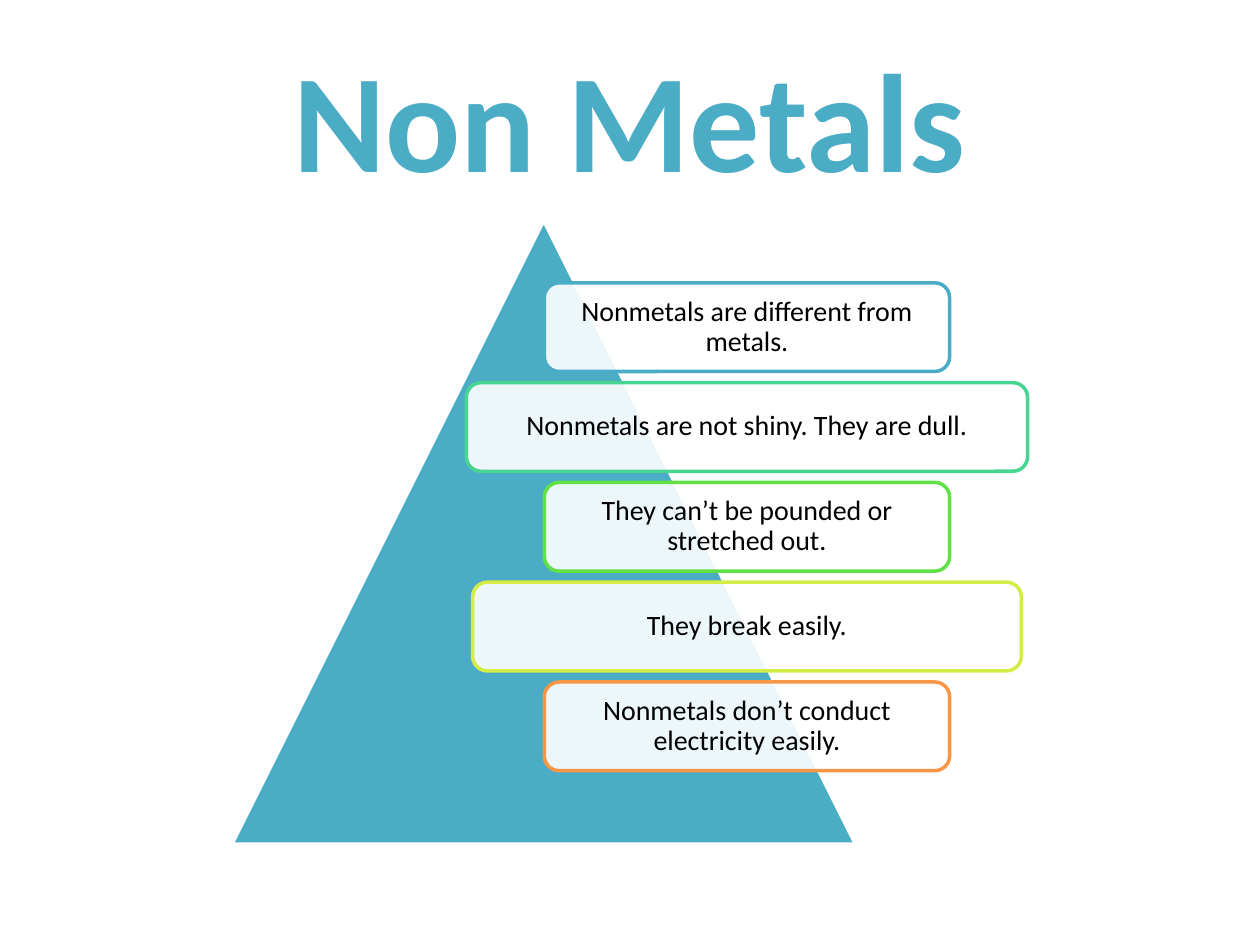
from pptx import Presentation
from pptx.dml.color import RGBColor
from pptx.enum.shapes import MSO_SHAPE
from pptx.enum.text import MSO_ANCHOR, PP_ALIGN
from pptx.oxml.ns import qn
from pptx.util import Inches, Pt
from lxml import etree

TRIANGLE = MSO_SHAPE.ISOSCELES_TRIANGLE
ROUNDED = MSO_SHAPE.ROUNDED_RECTANGLE
MIDDLE = MSO_ANCHOR.MIDDLE
CENTER = PP_ALIGN.CENTER

FONT = "Calibri"
TEAL = RGBColor(0x4B, 0xAC, 0xC6)
GREEN = RGBColor(0x48, 0xD4, 0x91)
LIME = RGBColor(0x60, 0xE1, 0x46)
YELLOW = RGBColor(0xD5, 0xEC, 0x46)
ORANGE = RGBColor(0xF7, 0x96, 0x46)
WHITE = RGBColor(0xFF, 0xFF, 0xFF)
BLACK = RGBColor(0, 0, 0)

FACTS = [
    ("Nonmetals are different from metals.", TEAL, 0.65),
    ("Nonmetals are not shiny. They are dull.", GREEN, 0.9),
    ("They can’t be pounded or stretched out.", LIME, 0.65),
    ("They break easily.", YELLOW, 0.88),
    ("Nonmetals don’t conduct electricity easily.", ORANGE, 0.65),
]


def write_text(sp, text, size, color, bold=False):
    """Write one centred paragraph into a shape."""
    tf = sp.text_frame
    tf.word_wrap = True
    tf.vertical_anchor = MIDDLE
    p = tf.paragraphs[0]
    p.text = text
    p.alignment = CENTER
    p.font.name = FONT
    p.font.size = Pt(size)
    p.font.bold = bold
    p.font.color.rgb = color
    return tf


def add_panel(s, kind, box, fill, line):
    """Add a filled and outlined shape without shadow."""
    sp = s.shapes.add_shape(kind, *(Inches(v) for v in box))
    sp.shadow.inherit = False
    sp.fill.solid()
    sp.fill.fore_color.rgb = fill
    sp.line.color.rgb = line
    sp.line.width = Pt(2)
    return sp


def add_title(s, box, text):
    """Place the slide title."""
    sp = s.shapes.add_textbox(*(Inches(v) for v in box))
    write_text(sp, text, 80, TEAL, bold=True)


def add_fact(s, box, text, color):
    """Place one translucent fact box."""
    sp = add_panel(s, ROUNDED, box, WHITE, color)
    clr = sp.fill._xPr.find(qn("a:solidFill"))[0]
    etree.SubElement(clr, qn("a:alpha"), val="90000")
    tf = write_text(sp, text, 16, BLACK)
    tf.margin_left = tf.margin_right = Inches(0.1)
    tf.margin_top = tf.margin_bottom = Inches(0.07)
    tf.paragraphs[0].line_spacing = 0.9


def add_pyramid(s, box, facts):
    """Place the triangle and its column of fact boxes."""
    left, top, width, height = box
    add_panel(s, TRIANGLE, box, TEAL, WHITE)
    center = left + 0.826 * width
    pitch = 0.16 * height
    for i, (text, color, share) in enumerate(facts):
        w = share * width
        y = top + 0.1 * height + i * pitch
        add_fact(s, (center - w / 2, y, w, pitch * 8 / 9), text, color)


def main():
    """Build and save the slide."""
    prs = Presentation()
    prs.slide_width, prs.slide_height = Inches(10), Inches(7.5)
    s = prs.slides.add_slide(prs.slide_layouts[6])
    add_title(s, (0.5, 0.3, 9, 1.25), "Non Metals")
    add_pyramid(s, (1.84, 1.75, 4.95, 4.95), FACTS)
    prs.save("out.pptx")


if __name__ == "__main__":
    main()
